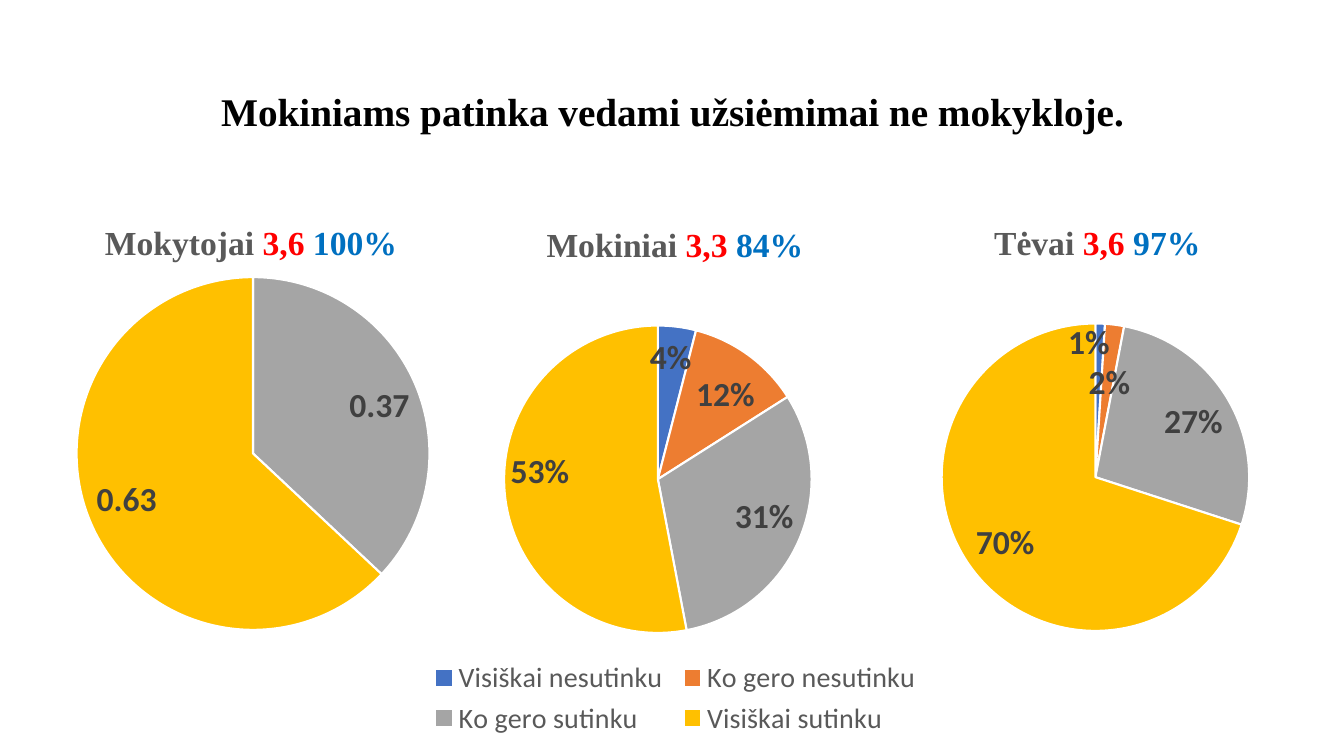
from dataclasses import dataclass

from lxml import etree
from pptx import Presentation
from pptx import util as u
from pptx.chart import data
from pptx.dml import color
from pptx.enum import chart as charts, text
from pptx.oxml import ns


@dataclass(frozen=True)
class Theme:
    heading_font: str = "Times New Roman"
    body_font: str = "Calibri"
    ink: str = "000000"
    grey: str = "595959"
    label: str = "404040"
    score: str = "FF0000"
    share: str = "0070C0"
    edge: str = "FFFFFF"
    slices: tuple = ("4472C4", "ED7D31", "A5A5A5", "FFC000")
    title_size: int = 28
    chart_size: int = 24
    legend_size: int = 20
    base_size: int = 10


class SurveySlide:
    """Holds the theme and the slide, and adds each kind of element."""

    def __init__(self, slide, theme):
        self.slide = slide
        self.theme = theme

    def style(self, font, size, fill, bold=False, name=None):
        font.name = name or self.theme.body_font
        font.size = u.Pt(size)
        font.bold = bold
        font.color.rgb = color.RGBColor.from_string(fill)

    def add_run(self, paragraph, words, size, fill):
        run = paragraph.add_run()
        run.text = words
        self.style(run.font, size, fill, True, self.theme.heading_font)

    def title(self, words, box):
        shape = self.slide.shapes.title
        shape.left, shape.top, shape.width, shape.height = map(u.Inches, box)
        shape.text_frame.vertical_anchor = text.MSO_ANCHOR.MIDDLE
        paragraph = shape.text_frame.paragraphs[0]
        paragraph.alignment = text.PP_ALIGN.CENTER
        paragraph.line_spacing = 0.9
        self.add_run(paragraph, words, self.theme.title_size, self.theme.ink)

    def layout(self, parent, index, **settings):
        for old in parent.findall(ns.qn("c:layout")):
            parent.remove(old)
        layout = etree.Element(ns.qn("c:layout"))
        manual = etree.SubElement(layout, ns.qn("c:manualLayout"))
        for name, value in settings.items():
            etree.SubElement(manual, ns.qn(f"c:{name}")).set("val", str(value))
        parent.insert(index, layout)

    def place(self, parent, index, frame, area, inner=False):
        left, top, width, height = frame
        settings = {"layoutTarget": "inner"} if inner else {}
        settings.update(xMode="edge", yMode="edge",
                        x=(area[0] - left) / width, y=(area[1] - top) / height)
        if len(area) == 4:
            settings.update(w=area[2] / width, h=area[3] / height)
        self.layout(parent, index, **settings)

    def pie(self, frame, heading, heading_at, pie_area, categories, values,
            number_format="0%", shifts=None, hidden=(), legend_area=None):
        theme = self.theme
        chart_data = data.CategoryChartData(number_format=number_format)
        chart_data.categories = categories
        chart_data.add_series("Series 1", values)
        chart = self.slide.shapes.add_chart(
            charts.XL_CHART_TYPE.PIE, *map(u.Inches, frame), chart_data).chart
        self.style(chart.font, theme.base_size, theme.ink)
        plot = chart.plots[0]
        plot.vary_by_categories = True

        paragraph = chart.chart_title.text_frame.paragraphs[0]
        for words, fill in zip(heading, (theme.grey, theme.score, theme.share)):
            self.add_run(paragraph, words, theme.chart_size, fill)
        self.place(chart.element.xpath("c:chart/c:title")[0], 1, frame, heading_at)
        self.place(chart.element.xpath("c:chart/c:plotArea")[0], 0, frame, pie_area, True)

        series = plot.series[0]
        for index, fill in enumerate(theme.slices):
            point = series.points[index].format
            point.fill.solid()
            point.fill.fore_color.rgb = color.RGBColor.from_string(fill)
            point.line.color.rgb = color.RGBColor.from_string(theme.edge)
            point.line.width = u.Pt(1.5)
        labels = series.data_labels
        labels.show_value = True
        labels.position = charts.XL_LABEL_POSITION.INSIDE_END
        self.style(labels.font, theme.chart_size, theme.label, True)
        self.move_labels(chart, series, frame, shifts or {})
        self.hide_labels(chart, series, hidden)

        chart.has_legend = legend_area is not None
        if legend_area:
            chart.legend.position = charts.XL_LEGEND_POSITION.BOTTOM
            chart.legend.include_in_layout = False
            self.style(chart.legend.font, theme.legend_size, theme.grey)
            self.place(chart.element.xpath("c:chart/c:legend")[0], 1, frame, legend_area)

    def point_label(self, chart, series, index):
        label = series.points[index].data_label
        label.position = charts.XL_LABEL_POSITION.INSIDE_END
        self.style(label.font, self.theme.chart_size, self.theme.label, True)
        return chart.element.xpath(f".//c:dLbl[c:idx/@val='{index}']")[0]

    def move_labels(self, chart, series, frame, shifts):
        for index, (right, down) in shifts.items():
            element = self.point_label(chart, series, index)
            self.layout(element, 1, x=right / frame[2], y=down / frame[3])

    def hide_labels(self, chart, series, hidden):
        for index in hidden:
            element = self.point_label(chart, series, index)
            for child in list(element)[1:]:
                element.remove(child)
            etree.SubElement(element, ns.qn("c:delete")).set("val", "1")


def main():
    presentation = Presentation()
    presentation.slide_width = u.Inches(13.33)
    presentation.slide_height = u.Inches(7.5)
    slide = presentation.slides.add_slide(presentation.slide_layouts[5])
    survey = SurveySlide(slide, Theme())
    numbers = ("1", "2", "3", "4")
    answers = ("Visiškai nesutinku", "Ko gero nesutinku",
               "Ko gero sutinku", "Visiškai sutinku")

    survey.title("Mokiniams patinka vedami užsiėmimai ne mokykloje.",
                 (0.92, 0.4, 11.5, 1.45))
    survey.pie((0.17, 2, 4.66, 4.4), ("Mokytojai ", "3,6 ", "100%"), (1.01, 2.18),
               (0.76, 2.75, 3.5, 3.5), numbers, (0, 0, 0.37, 0.63),
               number_format="General", hidden=(0, 1))
    survey.pie((2.22, 2, 8.89, 5.35), ("Mokiniai ", "3,3 ", "84%"), (5.39, 2.2),
               (5, 3.23, 3.05, 3.05), answers, (0.04, 0.12, 0.31, 0.53),
               shifts={0: (0.15, 0.05), 1: (0.1, 0.15)},
               legend_area=(4.2, 6.5, 5, 0.85))
    survey.pie((8.65, 2, 4.43, 4.4), ("Tėvai ", "3,6 ", "97%"), (9.83, 2.18),
               (9.34, 3.21, 3.05, 3.05), numbers, (0.01, 0.02, 0.27, 0.7),
               shifts={0: (-0.11, -0.06), 1: (0.16, 0.32)})
    presentation.save("out.pptx")


if __name__ == "__main__":
    main()
